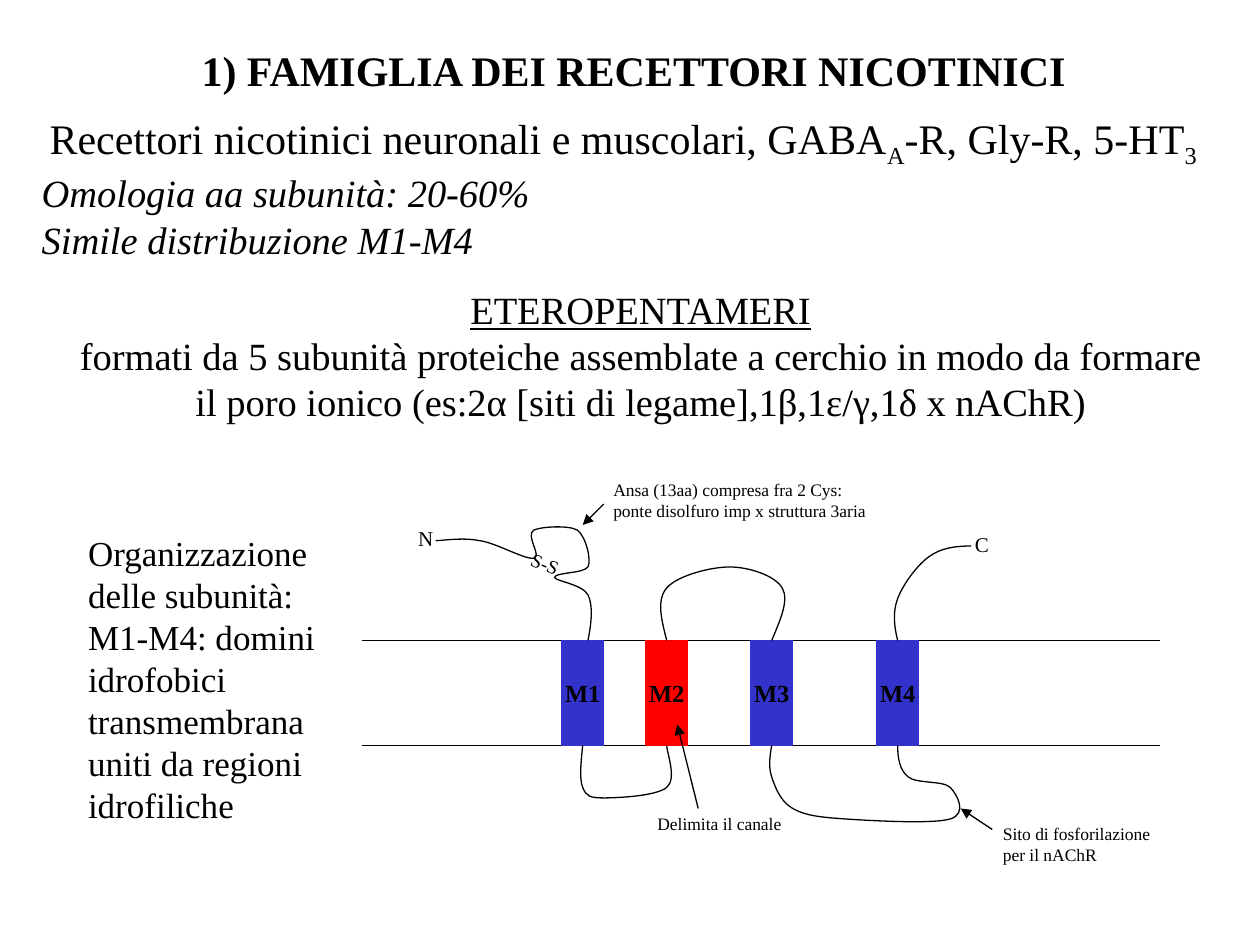
from lxml.etree import SubElement
from pptx import Presentation
from pptx.dml.color import RGBColor
from pptx.enum.shapes import MSO_CONNECTOR, MSO_SHAPE
from pptx.enum.text import MSO_ANCHOR as Anchor, MSO_AUTO_SIZE as AutoSize, PP_ALIGN as Align
from pptx.oxml.ns import qn
from pptx.util import Pt

FONT = "Times New Roman"
BLACK, BLUE, RED = "000000", "3333CC", "FF0000"
MEMBRANE_LEFT, MEMBRANE_RIGHT = 206.7, 663
MEMBRANE_TOP, MEMBRANE_BOTTOM = 366, 426
DOMAIN_WIDTH = 24
DOMAINS = [("M1", 333, BLUE), ("M2", 381, RED), ("M3", 441, BLUE), ("M4", 513, BLUE)]

# Each chain: a start point, then Bezier segments of two control points and an end.
CHAINS = [
    # M1-M2
    [(333, 426), (332, 435.5), (331, 445), (333, 450), (335, 455), (337, 456), (345, 456),
     (353, 456), (375, 455), (381, 450), (387, 445), (381, 430), (381, 426)],
    # N terminus with the Cys loop
    [(336, 366), (338, 356), (339, 346), (336, 340), (333, 334), (317, 332), (317, 330),
     (317, 327), (333, 328), (336, 324), (338, 320), (335, 307), (330, 303),
     (325, 300), (309, 301), (305, 303), (300, 306), (310, 318), (305, 319),
     (300, 320), (283, 310), (274, 309), (264, 307), (253, 309), (249, 309)],
    # M2-M3
    [(381, 366), (378, 354), (375, 343), (381, 336), (387, 329), (406, 324), (417, 324),
     (428, 324), (443, 329), (447, 336), (451, 343), (446, 354), (441, 366)],
    # M3-M4
    [(441, 426), (440, 432), (439, 438), (441, 444), (443, 450), (446, 458), (453, 462),
     (460, 466), (468, 467), (483, 468), (498, 469), (533, 471), (543, 468),
     (553, 465), (547, 454), (543, 450), (539, 446), (524, 448), (519, 444),
     (514, 440), (513, 433), (513, 426)],
    # C terminus
    [(513, 366), (511, 358), (510, 350), (513, 342), (516, 334), (524, 323), (531, 318),
     (538, 313), (546, 312), (555, 312)],
]
ARROWS = [((345, 288), (333, 300)), ((399, 462), (387, 414)), ((567, 474), (549, 462))]
# Text, box, size, wrap, rotation
LABELS = [
    ("N", (231.8, 296.6, 23, 21.6), 12, False, 0),
    ("C", (550, 300, 22.3, 21.6), 12, False, 0),
    ("S-S", (296.6, 311.8, 30.2, 20.2), 11, False, 22.8),
    ("Ansa (13aa) compresa fra 2 Cys: ponte disolfuro imp x struttura 3aria",
     (343.4, 270, 163.4, 31), 10, True, 0),
    ("Delimita il canale", (368.6, 460.8, 85.7, 19.4), 10, False, 0),
    ("Sito di fosforilazione per il nAChR", (566, 466.6, 103, 31), 10, True, 0),
]


def color(hex_text):
    return RGBColor.from_string(hex_text)


def write(paragraph, text, size, bold=False, italic=False, underline=False, subscript=False):
    run = paragraph.add_run()
    run.text = text
    font = run.font
    font.name, font.size, font.bold = FONT, Pt(size), bold
    font.italic, font.underline = italic, underline
    font.color.rgb = color(BLACK)
    if subscript:
        run._r.get_or_add_rPr().set("baseline", "-25000")


def next_paragraph(frame, align=Align.LEFT):
    """Return the empty first paragraph, or a new one once that is in use."""
    first = frame.paragraphs[0]
    paragraph = frame.add_paragraph() if first.runs else first
    paragraph.alignment = align
    return paragraph


def place(shape, box, wrap=True, anchor=Anchor.TOP):
    """Move a text-bearing shape and return its text frame."""
    shape.left, shape.top, shape.width, shape.height = (Pt(length) for length in box)
    frame = shape.text_frame
    frame.word_wrap, frame.auto_size, frame.vertical_anchor = wrap, AutoSize.NONE, anchor
    return frame


def add_text_box(slide, box, wrap=True, rotation=0):
    shape = slide.shapes.add_textbox(0, 0, 0, 0)
    shape.rotation = rotation
    return place(shape, box, wrap)


def format_line(shape, hex_text=BLACK):
    shape.line.color.rgb = color(hex_text)
    shape.line.width = Pt(0.75)


def add_line(slide, start, end, arrow=False):
    points = (Pt(length) for length in (*start, *end))
    line = slide.shapes.add_connector(MSO_CONNECTOR.STRAIGHT, *points)
    format_line(line)
    if arrow:
        SubElement(line.line._get_or_add_ln(), qn("a:tailEnd"), type="triangle")
    SubElement(line._element.spPr, qn("a:effectLst"))


def add_curve(slide, points):
    """Build an open outline, then turn every three line steps into one Bezier step."""
    builder = slide.shapes.build_freeform(*points[0], scale=Pt(1))
    builder.add_line_segments(points[1:], close=False)
    curve = builder.convert_to_shape()
    curve.fill.background()
    format_line(curve)
    curve.shadow.inherit = False
    steps = list(curve._element.iter(qn("a:lnTo")))
    outline = steps[0].getparent()
    for index in range(0, len(steps), 3):
        bezier = SubElement(outline, qn("a:cubicBezTo"))
        for step in steps[index:index + 3]:
            bezier.append(step[0])
            outline.remove(step)


def add_domain(slide, name, center, fill):
    box = (center - DOMAIN_WIDTH / 2, MEMBRANE_TOP, DOMAIN_WIDTH, MEMBRANE_BOTTOM - MEMBRANE_TOP)
    shape = slide.shapes.add_shape(MSO_SHAPE.RECTANGLE, 0, 0, 0, 0)
    frame = place(shape, box, wrap=False, anchor=Anchor.MIDDLE)
    shape.fill.solid()
    shape.fill.fore_color.rgb = color(fill)
    format_line(shape, fill)
    shape.shadow.inherit = False
    write(next_paragraph(frame, Align.CENTER), name, 14, bold=True)


def remove_bullet(paragraph):
    properties = paragraph._p.get_or_add_pPr()
    properties.set("marL", "0")
    properties.set("indent", "0")
    paragraph.space_before = Pt(0)
    SubElement(properties, qn("a:buNone"))


def add_headings(slide):
    title = place(slide.shapes.title, (105.8, 21.6, 512.6, 36), wrap=False)
    write(next_paragraph(title, Align.CENTER), "1) FAMIGLIA DEI RECETTORI NICOTINICI", 24, bold=True)

    body = place(slide.placeholders[1], (16.6, 60.5, 679, 89.3))
    receptors = next_paragraph(body, Align.CENTER)
    write(receptors, "Recettori nicotinici neuronali e muscolari, GABA", 24)
    write(receptors, "A", 24, subscript=True)
    write(receptors, "-R, Gly-R, 5-HT", 24)
    write(receptors, "3", 24, subscript=True)
    for text in ("Omologia aa subunità: 20-60%", "Simile distribuzione M1-M4"):
        write(next_paragraph(body), text, 22, italic=True)
    for paragraph in body.paragraphs:
        remove_bullet(paragraph)


def add_explanations(slide):
    pentamers = add_text_box(slide, (36, 159.8, 660.2, 87.1))
    write(next_paragraph(pentamers, Align.CENTER), "ETEROPENTAMERI", 22, underline=True)
    write(next_paragraph(pentamers, Align.CENTER),
          "formati da 5 subunità proteiche assemblate a cerchio in modo da formare "
          "il poro ionico (es:2α [siti di legame],1β,1ε/γ,1δ x nAChR)", 22)

    organization = add_text_box(slide, (43.2, 300.2, 169.2, 175))
    for text in ("Organizzazione delle subunità:",
                 "M1-M4: domini idrofobici transmembrana uniti da regioni idrofiliche"):
        write(next_paragraph(organization), text, 20)


def add_diagram(slide):
    for height in (MEMBRANE_TOP, MEMBRANE_BOTTOM):
        add_line(slide, (MEMBRANE_LEFT, height), (MEMBRANE_RIGHT, height))
    for name, center, fill in DOMAINS:
        add_domain(slide, name, center, fill)
    for points in CHAINS:
        add_curve(slide, points)
    for start, end in ARROWS:
        add_line(slide, start, end, arrow=True)
    for text, box, size, wrap, rotation in LABELS:
        write(next_paragraph(add_text_box(slide, box, wrap, rotation)), text, size)


def main():
    presentation = Presentation()
    presentation.slide_width, presentation.slide_height = Pt(720), Pt(540)
    slide = presentation.slides.add_slide(presentation.slide_layouts[1])
    add_headings(slide)
    add_explanations(slide)
    add_diagram(slide)
    presentation.save("out.pptx")


if __name__ == "__main__":
    main()
